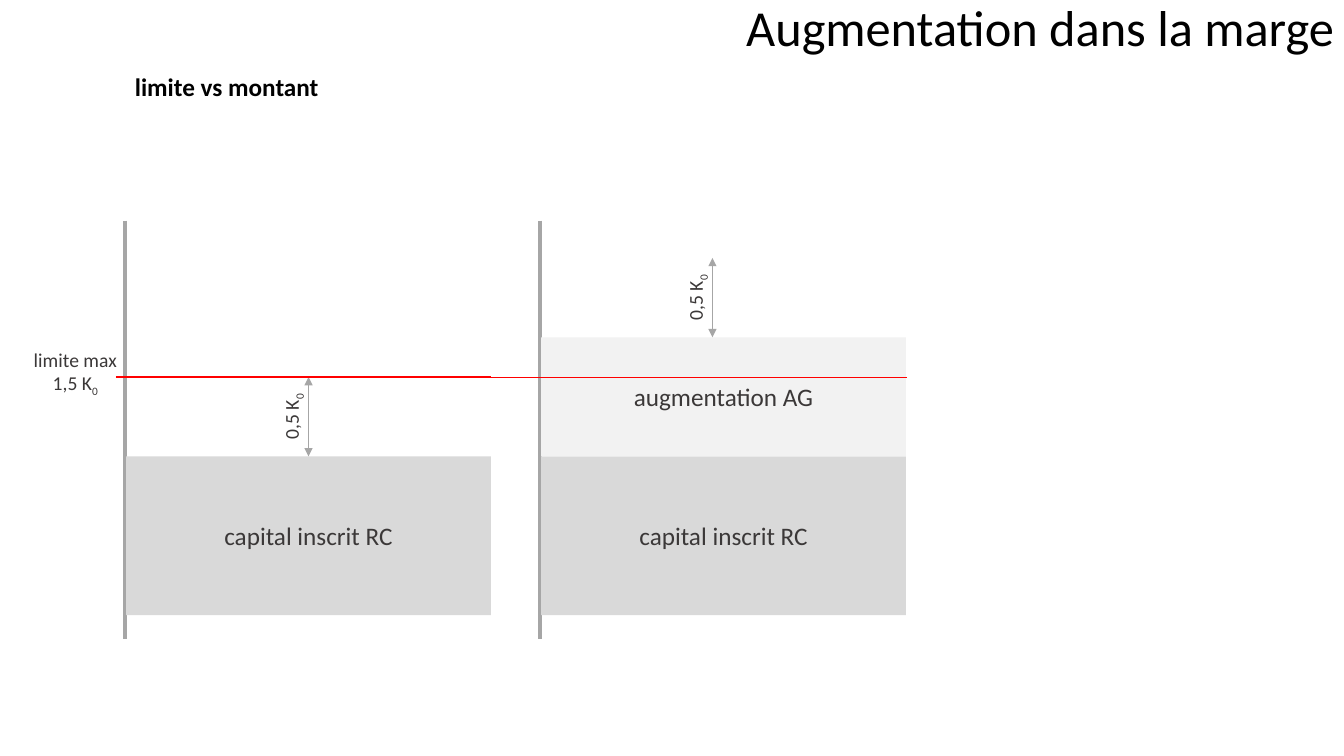
from dataclasses import dataclass

import pptx
import pptx.dml.color
import pptx.enum.shapes
import pptx.enum.text
import pptx.oxml
import pptx.oxml.ns
import pptx.util

Cm = pptx.util.Cm
Pt = pptx.util.Pt
ALIGN = pptx.enum.text.PP_ALIGN
ANCHOR = pptx.enum.text.MSO_ANCHOR
AUTO_SIZE = pptx.enum.text.MSO_AUTO_SIZE


@dataclass(frozen=True)
class Theme:
    """Colours, type sizes and line widths of the slide."""
    font: str = "Calibri"
    black: str = "000000"
    ink: str = "3B3838"
    axis: str = "A6A6A6"
    capital: str = "D9D9D9"
    increase: str = "F2F2F2"
    limit: str = "FF0000"
    title_size: int = 36
    body_size: int = 18
    label_size: int = 14
    axis_width: float = 2.25
    thin_width: float = 0.5


@dataclass(frozen=True)
class Box:
    """A region of the slide in centimetres."""
    left: float
    top: float
    width: float
    height: float

    def lengths(self):
        """Return the four lengths for python-pptx."""
        return [Cm(value) for value in (self.left, self.top, self.width, self.height)]


THEME = Theme()
UNIT = 4
LIMIT = 1.5
MARGIN = 0.5
INCREASE = 0.75
BASE_GAP = 0.6
AXIS_GAP = 0.03


def rgb(color):
    """Turn a hexadecimal colour into a colour object."""
    return pptx.dml.color.RGBColor.from_string(color)


def apply_format(target, values):
    """Set every attribute named in a dict of format values."""
    for name, value in values.items():
        setattr(target, name, value)


def write(frame, lines, size, color=THEME.ink, align=ALIGN.CENTER, bold=None, spacing=None):
    """Fill a text frame with lines, each a text and an optional subscript."""
    for index, (text, subscript) in enumerate(lines):
        para = frame.paragraphs[0] if index == 0 else frame.add_paragraph()
        apply_format(para, {"alignment": align, "line_spacing": spacing})
        for part in filter(None, (text, subscript)):
            span = para.add_run()
            span.text = part
            apply_format(span.font, {"name": THEME.font, "size": Pt(size), "bold": bold})
            span.font.color.rgb = rgb(color)
            if part == subscript:
                span.font._element.set("baseline", "-25000")


def add_label(page, box, lines, size, rotation=0, **style):
    """Add an unwrapped text box that grows with its text."""
    shape = page.shapes.add_textbox(*box.lengths())
    shape.rotation = rotation
    apply_format(shape.text_frame, {"word_wrap": False, "auto_size": AUTO_SIZE.SHAPE_TO_FIT_TEXT})
    write(shape.text_frame, lines, size, **style)


def add_line(page, start, end, color, width, arrows=False):
    """Draw a straight line, with arrowheads at both ends if asked."""
    line = page.shapes.add_connector(
        pptx.enum.shapes.MSO_CONNECTOR.STRAIGHT, *[Cm(value) for value in (*start, *end)])
    line.line.color.rgb = rgb(color)
    line.line.width = Pt(width)
    if arrows:
        outline = line.line._get_or_add_ln()
        for tag in ("a:headEnd", "a:tailEnd"):
            pptx.oxml.ns.qn(tag)
            outline.append(pptx.oxml.parse_xml(
                f'<{tag} {pptx.oxml.ns.nsdecls("a")} type="triangle"/>'))
    line._element.spPr.append(pptx.oxml.parse_xml(
        f'<a:effectLst {pptx.oxml.ns.nsdecls("a")}/>'))
    return line


def add_bar(page, box, text, color):
    """Add a filled rectangle with a centred caption."""
    bar = page.shapes.add_shape(pptx.enum.shapes.MSO_SHAPE.RECTANGLE, *box.lengths())
    bar.shadow.inherit = False
    bar.fill.solid()
    bar.fill.fore_color.rgb = rgb(color)
    bar.line.fill.background()
    apply_format(bar.text_frame, {"vertical_anchor": ANCHOR.MIDDLE, "word_wrap": True})
    write(bar.text_frame, [(text, None)], THEME.body_size)
    return bar


def add_margin(page, center, bottom):
    """Add the double arrow for the margin above a bar, with its label."""
    height = MARGIN * UNIT
    arrow = add_line(page, (center, bottom - height), (center, bottom),
                     THEME.axis, THEME.thin_width, arrows=True)
    width, depth = 1.68, 0.86
    label = Box(center - 0.43 - width / 2, bottom - height / 2 - depth / 2, width, depth)
    add_label(page, label, [("0,5 K", "0")], THEME.label_size, rotation=270)
    return arrow


def add_panel(page, box, increased=False, shift=0):
    """Draw one axis with its stacked bars and the margin above them."""
    base = box.top + box.height - BASE_GAP
    left, width = box.left + AXIS_GAP, box.width - AXIS_GAP
    add_line(page, (box.left, box.top), (box.left, box.top + box.height),
             THEME.axis, THEME.axis_width)
    top = base - UNIT
    bar = add_bar(page, Box(left, top, width, UNIT), "capital inscrit RC", THEME.capital)
    if increased:
        height = INCREASE * UNIT
        top -= height
        bar = add_bar(page, Box(left, top, width, height), "augmentation AG", THEME.increase)
    arrow = add_margin(page, left + width / 2 + shift, top)
    if not shift:
        arrow.end_connect(bar, 0)


def add_limit(page, box, panel_width):
    """Draw the upper limit across the box and over its first panel."""
    level = box.top + box.height - BASE_GAP - LIMIT * UNIT
    start = box.left - 0.23
    for end, lift in ((box.left + box.width, 0), (box.left + panel_width, 0.02)):
        add_line(page, (start, level - lift), (end, level - lift),
                 THEME.limit, THEME.thin_width)
    add_label(page, Box(box.left - 2.57, level - 0.86, 2.64, 1.45),
              [("limite max", None), ("1,5 K", "0")], THEME.label_size)


def add_heading(page, box):
    """Place the title and the subtitle in the given box."""
    title = page.shapes.title
    apply_format(title, dict(zip(("left", "top", "width", "height"), box.lengths())))
    apply_format(title.text_frame, {"vertical_anchor": ANCHOR.TOP, "word_wrap": True,
                                    "auto_size": AUTO_SIZE.NONE})
    write(title.text_frame, [("Augmentation dans la marge", None)], THEME.title_size,
          color=THEME.black, align=ALIGN.RIGHT, spacing=0.9)
    add_label(page, Box(box.left + 1.25, box.top + 1.73, 5.18, 1.02),
              [("limite vs montant", None)], THEME.body_size,
              color=THEME.black, align=ALIGN.LEFT, bold=True)


def add_comparison(page, box):
    """Draw the panels before and after the increase, with the limit."""
    panel_width, step = 9.22, 10.46
    add_panel(page, Box(box.left, box.top, panel_width, box.height))
    add_panel(page, Box(box.left + step, box.top, panel_width, box.height),
              increased=True, shift=-0.28)
    add_limit(page, box, panel_width)


def main():
    """Build the slide and save the deck."""
    deck = pptx.Presentation()
    deck.slide_width, deck.slide_height = Cm(33.87), Cm(19.05)
    page = deck.slides.add_slide(deck.slide_layouts.get_by_name("Title Only"))
    add_heading(page, Box(1.9, -0.05, 31.98, 2.72))
    add_comparison(page, Box(3.15, 5.56, 19.71, 10.54))
    deck.save("out.pptx")


if __name__ == "__main__":
    main()
